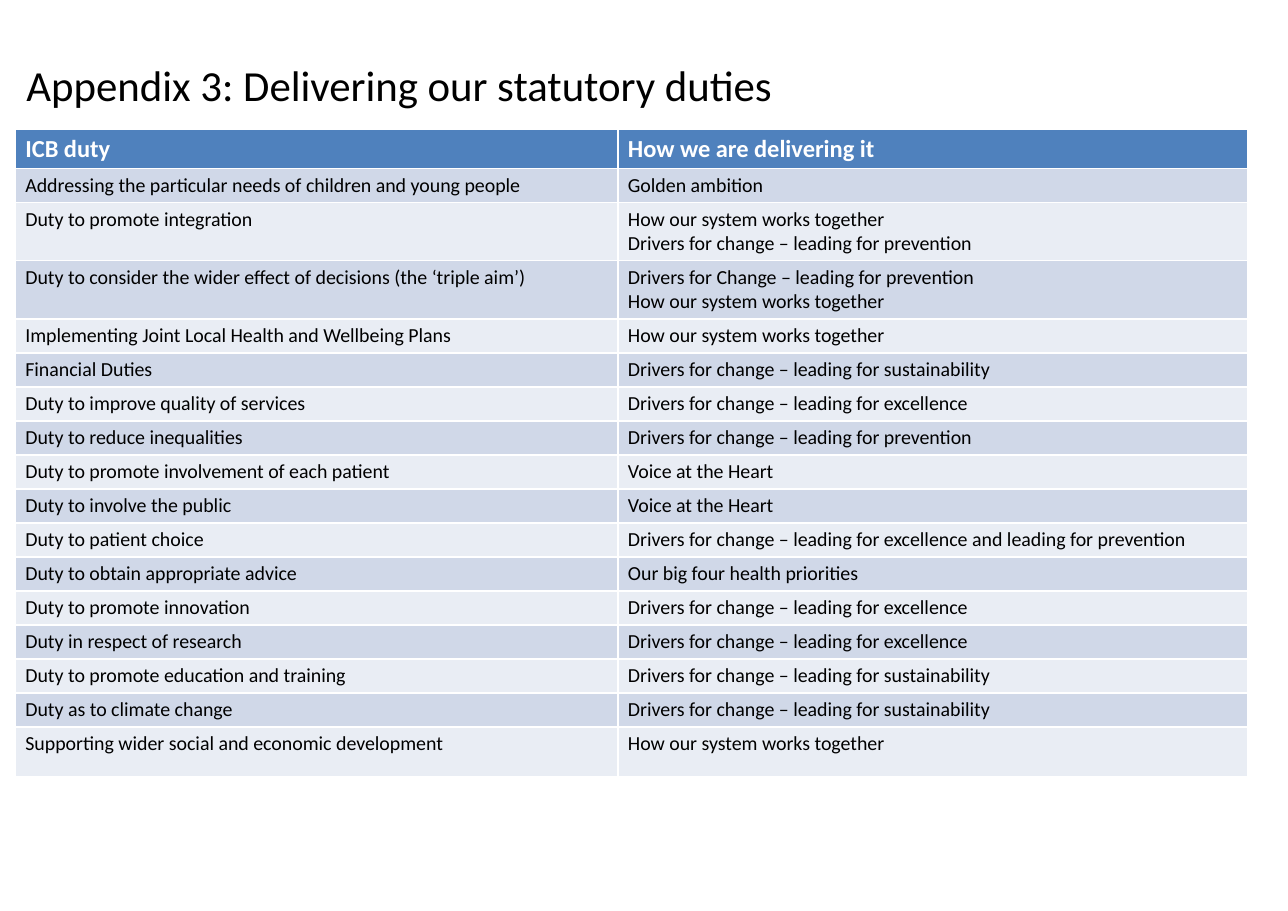
from pptx import Presentation
from pptx.dml.color import RGBColor
from pptx.enum.text import MSO_ANCHOR, PP_ALIGN
from pptx.util import Inches, Pt

FONT = "Calibri"
TITLE = "Appendix 3: Delivering our statutory duties"
HEADER = ("ICB duty", ["How we are delivering it"])

TOGETHER = "How our system works together"
PREVENTION = "Drivers for change – leading for prevention"
SUSTAINABILITY = "Drivers for change – leading for sustainability"
EXCELLENCE = "Drivers for change – leading for excellence"
VOICE = "Voice at the Heart"

DUTIES = [
    ("Addressing the particular needs of children and young people", ["Golden ambition"]),
    ("Duty to promote integration", [TOGETHER, PREVENTION]),
    ("Duty to consider the wider effect of decisions (the ‘triple aim’)",
     ["Drivers for Change – leading for prevention", TOGETHER]),
    ("Implementing Joint Local Health and Wellbeing Plans", [TOGETHER]),
    ("Financial Duties", [SUSTAINABILITY]),
    ("Duty to improve quality of services", [EXCELLENCE]),
    ("Duty to reduce inequalities", [PREVENTION]),
    ("Duty to promote involvement of each patient", [VOICE]),
    ("Duty to involve the public", [VOICE]),
    ("Duty to patient choice", [EXCELLENCE + " and leading for prevention"]),
    ("Duty to obtain appropriate advice", ["Our big four health priorities"]),
    ("Duty to promote innovation", [EXCELLENCE]),
    ("Duty in respect of research", [EXCELLENCE]),
    ("Duty to promote education and training", [SUSTAINABILITY]),
    ("Duty as to climate change", [SUSTAINABILITY]),
    ("Supporting wider social and economic development", [TOGETHER]),
]

HEADER_FILL = "4F81BD"
BANDS = ("D0D8E8", "E9EDF4")
LEFT = 0.14
COLUMN_WIDTHS = (5.47, 5.71)
HEADER_HEIGHT, FIRST_LINE, NEXT_LINE, LAST_HEIGHT = 0.34, 0.3, 0.21, 0.45


def color(hex_code):
    return RGBColor.from_string(hex_code)


def add_text(paragraph, text, size, hex_code, bold=False):
    run = paragraph.add_run()
    run.text = text
    run.font.name = FONT
    run.font.size = Pt(size)
    run.font.bold = bold
    run.font.color.rgb = color(hex_code)


def fill_cell(cell, lines, fill, size, text_color, bold):
    cell.fill.solid()
    cell.fill.fore_color.rgb = color(fill)
    cell.margin_left = cell.margin_right = Inches(0.09)
    cell.margin_top = cell.margin_bottom = Pt(3.2)
    frame = cell.text_frame
    for index, line in enumerate(lines):
        paragraph = frame.add_paragraph() if index else frame.paragraphs[0]
        add_text(paragraph, line, size, text_color, bold)


def add_title(slide):
    title = slide.shapes.title
    title.left, title.top = Inches(LEFT), Inches(0.48)
    title.width, title.height = Inches(10.91), Inches(0.57)
    frame = title.text_frame
    frame.word_wrap = True
    frame.vertical_anchor = MSO_ANCHOR.TOP
    frame.paragraphs[0].alignment = PP_ALIGN.LEFT
    add_text(frame.paragraphs[0], TITLE, 28, "000000")


def add_duties(slide):
    rows = [HEADER] + DUTIES
    heights = [FIRST_LINE + NEXT_LINE * (len(delivery) - 1) for _, delivery in rows]
    heights[0], heights[-1] = HEADER_HEIGHT, LAST_HEIGHT
    duties = slide.shapes.add_table(
        len(rows), len(COLUMN_WIDTHS), Inches(LEFT), Inches(1.17),
        Inches(sum(COLUMN_WIDTHS)), Inches(sum(heights))).table
    for column, width in zip(duties.columns, COLUMN_WIDTHS):
        column.width = Inches(width)
    for index, (duty, delivery) in enumerate(rows):
        duties.rows[index].height = Inches(heights[index])
        if index == 0:
            look = (HEADER_FILL, 16, "FFFFFF", True)
        else:
            look = (BANDS[(index - 1) % 2], 13, "000000", False)
        fill_cell(duties.cell(index, 0), [duty], *look)
        fill_cell(duties.cell(index, 1), delivery, *look)


def main():
    deck = Presentation()
    deck.slide_width, deck.slide_height = Inches(11.69), Inches(8.27)
    slide = deck.slides.add_slide(deck.slide_layouts[5])
    add_title(slide)
    add_duties(slide)
    deck.save("out.pptx")


if __name__ == "__main__":
    main()
